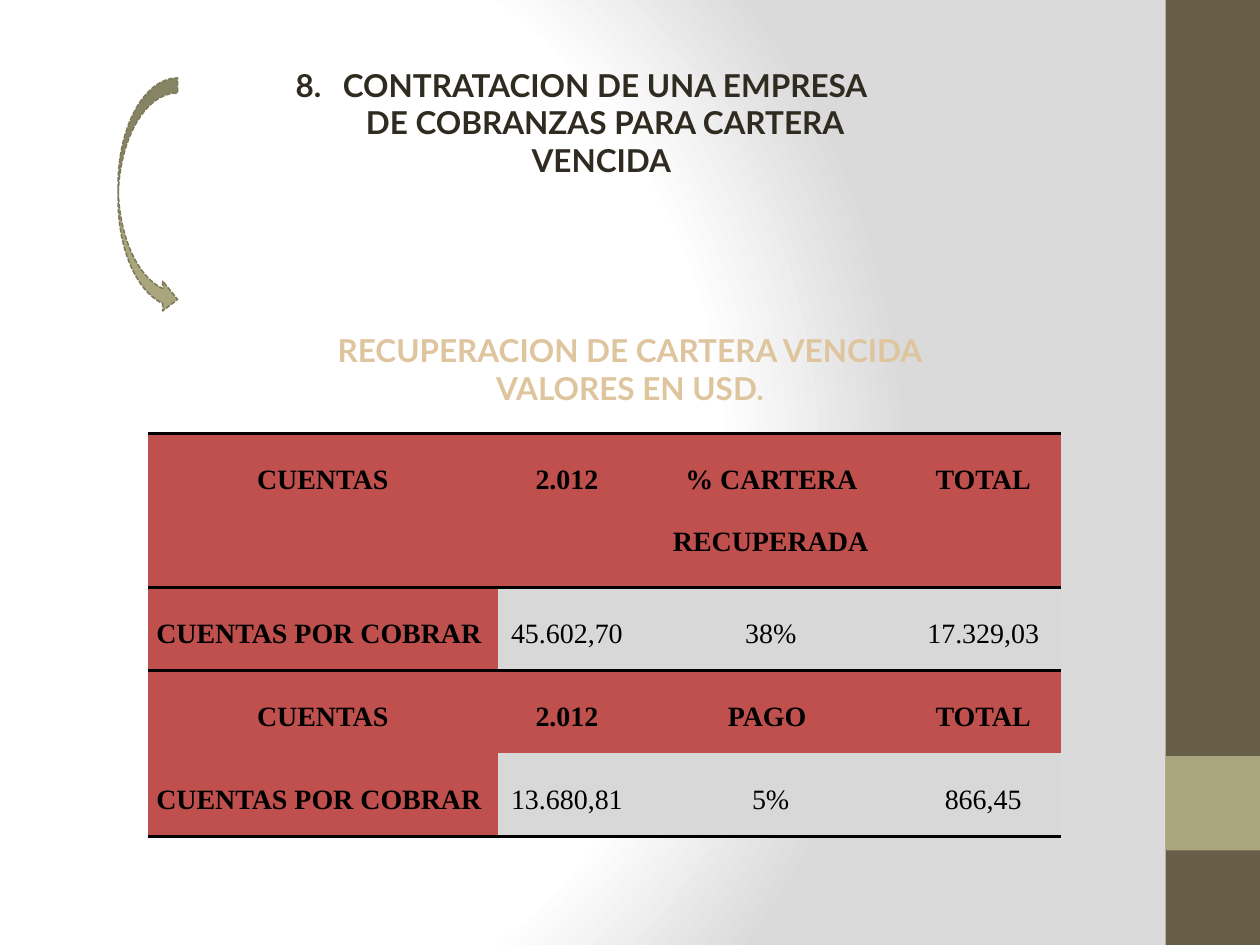
from pptx import Presentation
from pptx.dml.color import RGBColor
from pptx.enum.dml import MSO_LINE
from pptx.enum.shapes import MSO_SHAPE
from pptx.enum.text import MSO_AUTO_SIZE, PP_ALIGN
from pptx.oxml import parse_xml
from pptx.oxml.ns import nsdecls
from pptx.util import Pt

RECTANGLE, CURVED_ARROW = MSO_SHAPE.RECTANGLE, MSO_SHAPE.CURVED_RIGHT_ARROW
LEFT, CENTER = PP_ALIGN.LEFT, PP_ALIGN.CENTER
SHORT_DASH = MSO_LINE.SQUARE_DOT
GROW = MSO_AUTO_SIZE.SHAPE_TO_FIT_TEXT
NO_TABLE_STYLE = "{2D5ABB26-0587-4C30-8999-92F81FD0307C}"

COLORS = {
    "white": "FFFFFF", "gray": "DADADA", "band": "675E47", "accent": "A9A57C",
    "arrow_line": "7D7A5C", "title": "2F2B20", "subtitle": "DEC59E",
    "black": "000000", "header": "C0504D", "value": "D8D8D8",
}

# Content
TITLE = ["CONTRATACION DE UNA EMPRESA DE COBRANZAS PARA CARTERA VENCIDA "]
TITLE_NUMBER = 8
SUBTITLE = ["RECUPERACION DE CARTERA VENCIDA", "VALORES EN USD."]
ACCOUNTS = [
    ("CUENTAS", "2.012", "% CARTERA RECUPERADA", "TOTAL"),
    ("CUENTAS POR COBRAR", "45.602,70", "38%", "17.329,03"),
    ("CUENTAS", "2.012", "PAGO ", "TOTAL"),
    ("CUENTAS POR COBRAR", "13.680,81", "5%", "866,45"),
]
COLUMN_WIDTHS = [200.3, 78.7, 154.2, 88.7]
ROW_HEIGHTS = [88.1, 47.4, 47.4, 47.4]
RULED_EDGES = {0: ["lnT", "lnB"], 1: ["lnT"], 3: ["lnB"]}
HEADER_ROWS = (0, 2)

# Left, top, width, height
BAND_AT = (666, 0, 54, 540)
ACCENT_AT = (666, 432, 54, 54)
TITLE_AT = (152, 34, 360, 72.7)
SUBTITLE_AT = (157, 185.8, 406, 51)
TABLE_AT = (84.3, 247.6, sum(COLUMN_WIDTHS), sum(ROW_HEIGHTS))
ARROW_AT = (67.5, 44.6, 34, 135)


def rgb(name):
    return RGBColor.from_string(COLORS[name])


def points(box):
    return [Pt(length) for length in box]


def apply(target, values):
    for name, value in values.items():
        setattr(target, name, value)


def write(paragraph, text, size, font, color, bold, align):
    run = paragraph.add_run()
    run.text = text
    paragraph.alignment = align
    apply(run.font, {"size": Pt(size), "name": font, "bold": bold})
    run.font.color.rgb = rgb(color)


def add_block(kind, box, color):
    block = slide.shapes.add_shape(kind, *points(box))
    block.shadow.inherit = False
    block.fill.solid()
    block.fill.fore_color.rgb = rgb(color)
    block.line.fill.background()
    return block


def add_heading(lines, box, color):
    frame = slide.shapes.add_textbox(*points(box)).text_frame
    apply(frame, {"word_wrap": True, "auto_size": GROW})
    for index, line in enumerate(lines):
        paragraph = frame.add_paragraph() if index else frame.paragraphs[0]
        write(paragraph, line, 18, "Lato", color, True, CENTER)
        indent = paragraph._p.get_or_add_pPr()
        indent.set("marL", str(Pt(27)))
        indent.set("indent", str(Pt(-27)))
    return frame


def rule_cell(cell, edges):
    properties = cell._tc.get_or_add_tcPr()
    for position, edge in enumerate(edges):
        properties.insert(position, parse_xml(
            f'<a:{edge} {nsdecls("a")} w="{Pt(2.25)}"><a:solidFill>'
            f'<a:srgbClr val="{COLORS["black"]}"/></a:solidFill></a:{edge}>'))


prs = Presentation()
apply(prs, {"slide_width": Pt(720), "slide_height": Pt(540)})
slide = prs.slides.add_slide(prs.slide_layouts[6])

# Background: radial gradient
stops = "".join(
    f'<a:gs pos="{percent * 1000}"><a:srgbClr val="{COLORS[name]}"/></a:gs>'
    for percent, name in [(0, "white"), (75, "white"), (100, "gray")])
slide._element.cSld.insert(0, parse_xml(
    f'<p:bg {nsdecls("p", "a")}><p:bgPr><a:gradFill rotWithShape="1">'
    f'<a:gsLst>{stops}</a:gsLst><a:path path="circle">'
    '<a:fillToRect l="20000" t="50000" r="100000" b="50000"/></a:path>'
    '</a:gradFill><a:effectLst/></p:bgPr></p:bg>'))

# Side band
add_block(RECTANGLE, BAND_AT, "band")
add_block(RECTANGLE, ACCENT_AT, "accent")

# Numbered title
title = add_heading(TITLE, TITLE_AT, "title")
title.paragraphs[0]._p.get_or_add_pPr().append(parse_xml(
    f'<a:buAutoNum {nsdecls("a")} type="arabicPeriod" startAt="{TITLE_NUMBER}"/>'))

# Accounts table
table = slide.shapes.add_table(
    len(ACCOUNTS), len(COLUMN_WIDTHS), *points(TABLE_AT)).table
apply(table, {"first_row": False, "horz_banding": False})
table._tbl.tblPr[0].text = NO_TABLE_STYLE
for column, width in zip(table.columns, COLUMN_WIDTHS):
    column.width = Pt(width)
for r, (account, height) in enumerate(zip(ACCOUNTS, ROW_HEIGHTS)):
    table.rows[r].height = Pt(height)
    for c, text in enumerate(account):
        cell = table.cell(r, c)
        heading = r in HEADER_ROWS or c == 0
        apply(cell, {"margin_left": Pt(5), "margin_right": Pt(5),
                     "margin_top": 0, "margin_bottom": 0})
        cell.fill.solid()
        cell.fill.fore_color.rgb = rgb("header" if heading else "value")
        paragraph = cell.text_frame.paragraphs[0]
        paragraph.line_spacing = 2.0
        align = CENTER if c or r in HEADER_ROWS else LEFT
        write(paragraph, text, 16, "Times New Roman", "black", heading, align)
        rule_cell(cell, RULED_EDGES.get(r, []))

# Table heading
add_heading(SUBTITLE, SUBTITLE_AT, "subtitle")

# Curved arrow from the title to the table heading
arrow = add_block(CURVED_ARROW, ARROW_AT, "accent")
arrow.line.color.rgb = rgb("arrow_line")
apply(arrow.line, {"width": Pt(0.9), "dash_style": SHORT_DASH})

prs.save("out.pptx")
